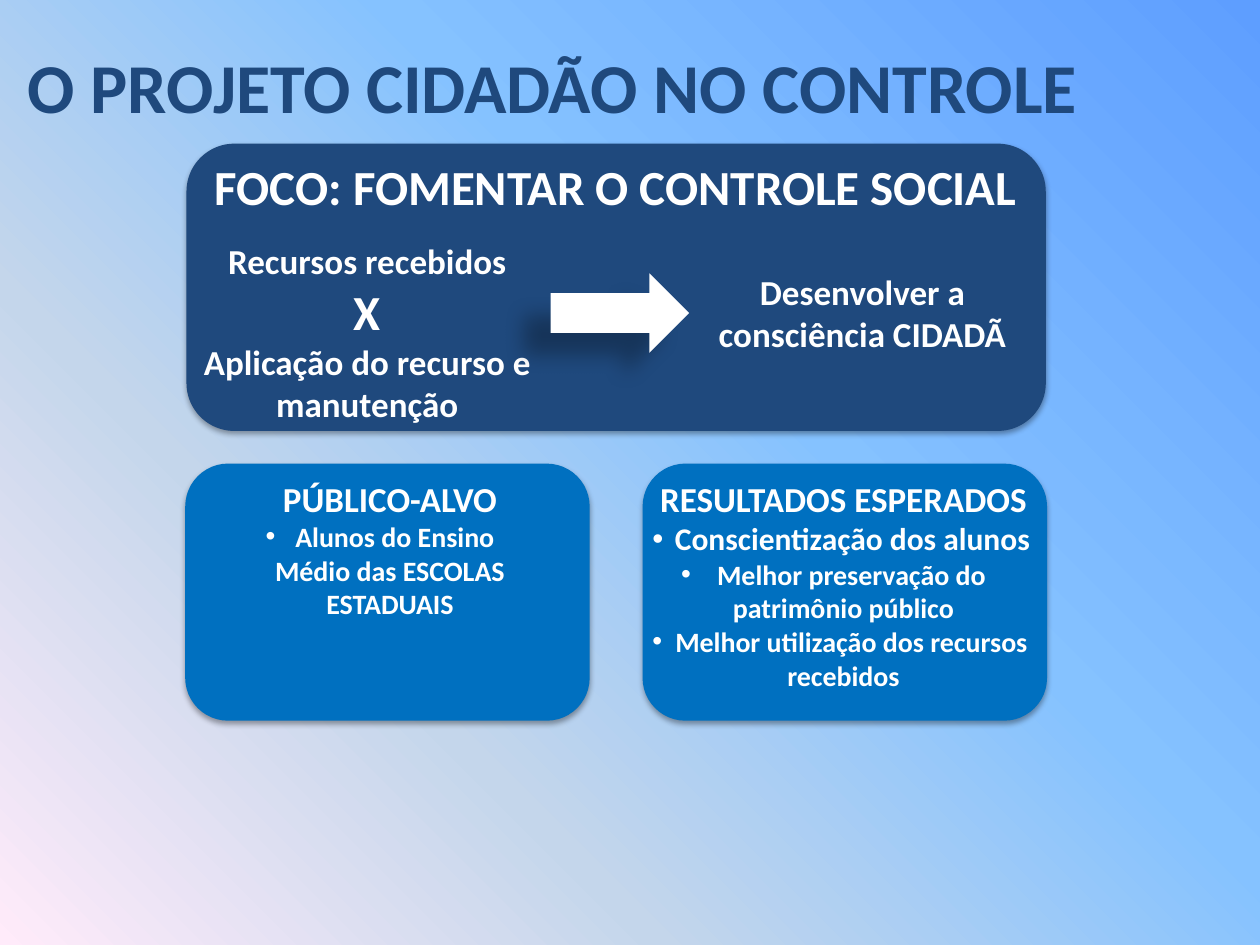
from dataclasses import dataclass

from lxml import etree
from pptx import Presentation
from pptx import util as u
from pptx.dml.color import RGBColor
from pptx.enum import shapes, text
from pptx.oxml import parse_xml
from pptx.oxml.ns import nsdecls, qn

SCALE = 9144


@dataclass(frozen=True)
class Theme:
    font: str = "Calibri"
    navy: str = "1F497D"
    blue: str = "0070C0"
    white: str = "FFFFFF"
    title: int = 40
    heading: int = 28
    body: int = 20
    item: int = 18
    detail: int = 16
    sky: tuple = ((0, "5E9EFF"), (40, "85C2FF"), (70, "C4D6EB"), (100, "FFEBFA"))
    sky_angle: int = 135
    panel_shadow: tuple = (35, 3.1, 1.8, 90)
    arrow_shadow: tuple = (28, 11.8, 19.7, 141)


class Slide:
    def __init__(self, deck, theme):
        self.theme = theme
        self.page = deck.slides.add_slide(deck.slide_layouts[6])

    def place(self, *lengths):
        return [u.Emu(length * SCALE) for length in lengths]

    def background(self):
        stops = "".join(
            f'<a:gs pos="{pos * 1000}"><a:srgbClr val="{color}"/></a:gs>'
            for pos, color in self.theme.sky
        )
        backdrop = parse_xml(
            f'<p:bg {nsdecls("p", "a")}><p:bgPr><a:gradFill rotWithShape="1">'
            f'<a:gsLst>{stops}</a:gsLst><a:lin ang="{self.theme.sky_angle * 60000}" scaled="0"/>'
            "</a:gradFill><a:effectLst/></p:bgPr></p:bg>"
        )
        self.page._element.cSld.insert(0, backdrop)

    def shape(self, kind, at, color, shadow):
        shape = self.page.shapes.add_shape(kind, *self.place(*at))
        shape.fill.solid()
        shape.fill.fore_color.rgb = RGBColor.from_string(color)
        shape.line.fill.background()
        shape.shadow.inherit = False
        alpha, blur, distance, angle = shadow
        effects = shape._element.spPr.find(qn("a:effectLst"))
        effects.append(parse_xml(
            f'<a:outerShdw {nsdecls("a")} blurRad="{u.Pt(blur)}" dist="{u.Pt(distance)}" '
            f'dir="{angle * 60000}" rotWithShape="0"><a:srgbClr val="000000">'
            f'<a:alpha val="{alpha * 1000}"/></a:srgbClr></a:outerShdw>'
        ))

    def panel(self, at, color):
        self.shape(shapes.MSO_SHAPE.ROUNDED_RECTANGLE, at, color, self.theme.panel_shadow)

    def arrow(self, at):
        self.shape(shapes.MSO_SHAPE.RIGHT_ARROW, at, self.theme.white, self.theme.arrow_shadow)

    def text(self, at, lines, color=None, align=text.PP_ALIGN.CENTER):
        box = self.page.shapes.add_textbox(*self.place(*at))
        frame = box.text_frame
        frame.word_wrap = True
        frame.auto_size = text.MSO_AUTO_SIZE.SHAPE_TO_FIT_TEXT
        for index, (words, size, bullet) in enumerate(lines):
            para = frame.paragraphs[0] if index == 0 else frame.add_paragraph()
            para.alignment = align
            if bullet:
                props = para._p.get_or_add_pPr()
                etree.SubElement(props, qn("a:buFont"), typeface="Arial")
                etree.SubElement(props, qn("a:buChar"), char="•")
            span = para.add_run()
            span.text = words
            span.font.color.rgb = RGBColor.from_string(color or self.theme.white)
            style = {"name": self.theme.font, "size": u.Pt(size), "bold": True}
            for name, value in style.items():
                setattr(span.font, name, value)


def main():
    theme = Theme()
    deck = Presentation()
    deck.slide_width, deck.slide_height = u.Inches(10), u.Inches(7.5)
    slide = Slide(deck, theme)
    slide.background()

    slide.text((12, 30, 961, 77), [("O PROJETO CIDADÃO NO CONTROLE", theme.title, False)],
               theme.navy, text.PP_ALIGN.LEFT)

    slide.panel((148, 114, 682, 228), theme.navy)
    for left in (147, 510):
        slide.panel((left, 368, 321, 204), theme.blue)

    slide.text((146, 119, 685, 57), [("FOCO: FOMENTAR O CONTROLE SOCIAL", theme.heading, False)])
    slide.text((138, 185, 307, 158), [
        ("Recursos recebidos", theme.body, False),
        ("X", theme.heading, False),
        ("Aplicação do recurso e manutenção", theme.body, False),
    ])
    slide.arrow((437, 217, 110, 63))
    slide.text((531, 210, 307, 77), [("Desenvolver a consciência CIDADÃ", theme.body, False)])

    slide.text((185, 374, 249, 125), [
        ("PÚBLICO-ALVO", theme.body, False),
        ("Alunos do Ensino Médio das ESCOLAS ESTADUAIS", theme.detail, True),
    ])
    slide.text((508, 374, 323, 215), [
        ("RESULTADOS ESPERADOS", theme.body, False),
        (" Conscientização dos alunos", theme.item, True),
        (" Melhor preservação do patrimônio público", theme.detail, True),
        (" Melhor utilização dos recursos recebidos", theme.detail, True),
    ])

    deck.save("out.pptx")


if __name__ == "__main__":
    main()
